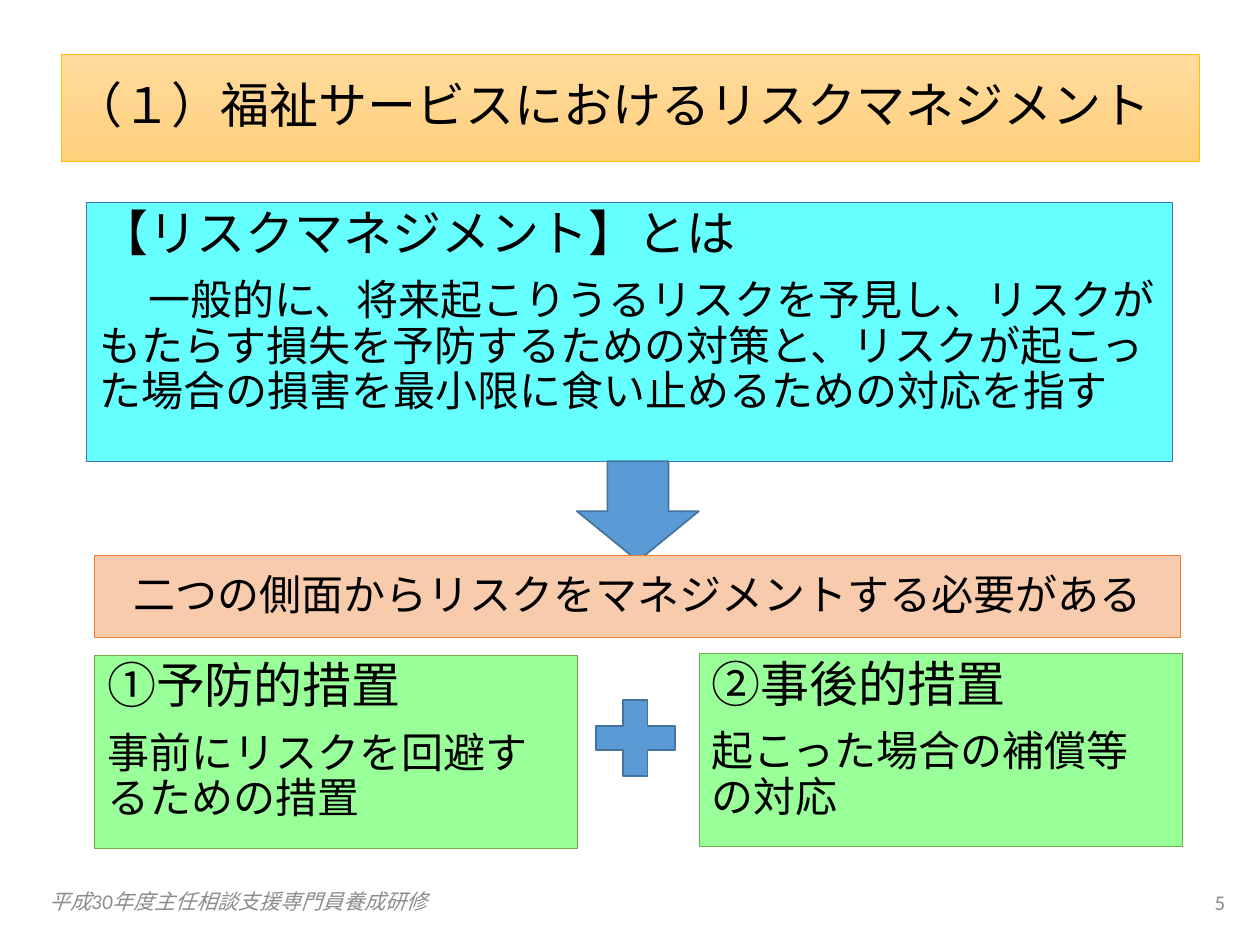
import pptx
import pptx.util
from dataclasses import dataclass
from pptx.dml.color import RGBColor
from pptx.enum.shapes import MSO_SHAPE
from pptx.enum.text import MSO_ANCHOR, PP_ALIGN
from pptx.util import Cm, Pt


@dataclass(frozen=True)
class Theme:
    cyan: str = "66FFFF"
    navy: str = "4472C4"
    blue: str = "5B9BD5"
    steel: str = "43739E"
    lime: str = "99FF99"
    green: str = "70AD47"
    peach: str = "F8CBAD"
    rust: str = "ED7D31"
    light: str = "FFDB9E"
    amber: str = "FFD07C"
    gold: str = "FFC000"
    ink: str = "000000"
    gray: str = "8C8C8C"
    head: int = 28
    text: int = 24
    note: int = 12


theme = Theme()


def draw(kind, box, fill, edge, width=0.5):
    shape = slide.shapes.add_shape(kind, *map(Cm, box))
    shape.shadow.inherit = False
    shape.fill.solid()
    shape.fill.fore_color.rgb = RGBColor.from_string(fill)
    shape.line.color.rgb = RGBColor.from_string(edge)
    shape.line.width = Pt(width)
    return shape


def write(shape, rows, align=PP_ALIGN.LEFT, anchor=MSO_ANCHOR.MIDDLE,
          face="Arial", color=theme.ink, space=0.9, before=0):
    """Fill the shape with one paragraph per (text, size) row."""
    frame = shape.text_frame
    frame.word_wrap = True
    frame.vertical_anchor = anchor
    for i, (text, size) in enumerate(rows):
        para = frame.add_paragraph() if i else frame.paragraphs[0]
        para.text = text
        para.alignment = align
        para.line_spacing = space
        para.space_before = Pt(before)
        para.font.name = face
        para.font.size = Pt(size)
        para.font.color.rgb = RGBColor.from_string(color)
    return frame.paragraphs


deck = pptx.Presentation()
deck.slide_width, deck.slide_height = Cm(25.4), Cm(19.05)
slide = deck.slides.add_slide(deck.slide_layouts[6])
rect = MSO_SHAPE.RECTANGLE

# Definition
body = draw(rect, (1.75, 4.09, 21.89, 5.21), theme.cyan, theme.navy)
paras = write(body, [
    ("【リスクマネジメント】とは", theme.head),
    ("一般的に、将来起こりうるリスクを予見し、リスクがもたらす損失を予防するための対策と、"
     "リスクが起こった場合の損害を最小限に食い止めるための対応を指す", theme.text),
], anchor=MSO_ANCHOR.TOP, before=10)
paras[1]._p.get_or_add_pPr().set("indent", str(Pt(theme.head)))

draw(MSO_SHAPE.DOWN_ARROW, (11.63, 9.3, 2.46, 2.01), theme.blue, theme.steel, 1)

# Two kinds of measure
for left, top, name, text in (
    (1.91, 13.21, "①予防的措置", "事前にリスクを回避するための措置"),
    (14.1, 13.18, "②事後的措置", "起こった場合の補償等の対応"),
):
    card = draw(rect, (left, top, 9.73, 3.89), theme.lime, theme.green)
    write(card, [(name, theme.head), (text, theme.text)],
          anchor=MSO_ANCHOR.TOP, before=10)

draw(MSO_SHAPE.MATH_PLUS, (11.73, 13.84, 2.16, 2.08), theme.blue, theme.steel, 1)

band = draw(rect, (1.91, 11.2, 21.89, 1.65), theme.peach, theme.rust)
write(band, [("二つの側面からリスクをマネジメントする必要がある", theme.text)],
      align=PP_ALIGN.CENTER, before=10)

# Title
title = draw(rect, (1.24, 1.09, 22.94, 2.17), theme.light, theme.gold)
title.fill.gradient()
title.fill.gradient_angle = 270
for stop, color in zip(title.fill.gradient_stops, (theme.light, theme.amber)):
    stop.color.rgb = RGBColor.from_string(color)
write(title, [("（１）福祉サービスにおけるリスクマネジメント", theme.head)], face="Calibri")

# Footer
for box, text, align, slant in (
    ((0.51, 17.65, 8.59, 1.02), "平成30年度主任相談支援専門員養成研修", PP_ALIGN.CENTER, True),
    ((19.23, 17.68, 5.72, 1.02), "5", PP_ALIGN.RIGHT, False),
):
    foot = slide.shapes.add_textbox(*map(Cm, box))
    paras = write(foot, [(text, theme.note)], align=align,
                  face="Calibri", color=theme.gray, space=1.0)
    paras[0].font.italic = slant

deck.save("out.pptx")
